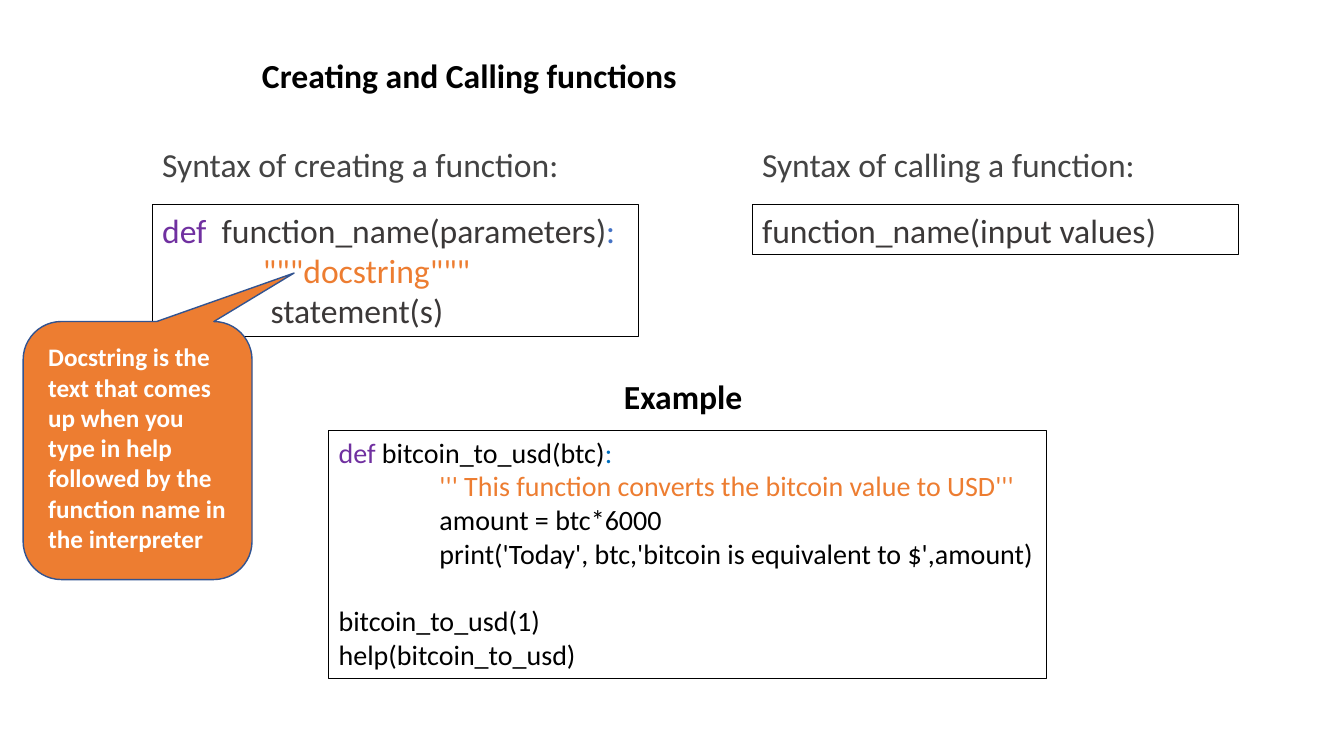
"""Build the slide on creating and calling Python functions."""
import lxml.etree
import pptx
import pptx.dml.color
import pptx.enum.shapes
import pptx.enum.text
import pptx.oxml.ns
import pptx.util

Inches = pptx.util.Inches
Pt = pptx.util.Pt
SHAPE = pptx.enum.shapes.MSO_SHAPE

COLORS = {
    "black": "000000", "white": "FFFFFF", "label": "444444",
    "code": "3B3838", "paren": "404040", "keyword": "7030A0",
    "colon": "4472C4", "colon_example": "0070C0",
    "orange": "ED7D31", "callout_line": "325491",
}

HEADINGS = [
    ("Creating and Calling functions", (2.5, 0.5, 4.32, 0.5), "black", True),
    ("Syntax of creating a function:", (1.51, 1.38, 4.17, 0.5), "label", False),
    ("Syntax of calling a function:", (7.46, 1.38, 3.93, 0.5), "label", False),
    ("Example", (6.09, 3.68, 1.46, 0.5), "black", True),
]

CODE_BOXES = [
    ((1.51, 2.03, 4.82, 1.31), 24, [
        [("def  ", "keyword"), ("function_name(parameters", "code"),
         (")", "paren"), (":", "colon")],
        [("\t", "code"), ('"""docstring"""', "orange")],
        [("\t statement(s)", "code")],
    ], {}),
    ((7.46, 2.03, 4.82, 0.5), 24, [
        [("function_name(input values", "code"), (")", "paren")],
    ], {}),
    ((3.26, 4.27, 7.12, 2.46), 20, [
        [("def ", "keyword"), ("bitcoin_to_usd(btc)", "black"),
         (":", "colon_example")],
        [("\t", "black"),
         ("''' This function converts the bitcoin value to USD'''", "orange")],
        [("\tamount = btc*6000", "black")],
        [("\tprint('Today', btc,'bitcoin is equivalent to $',amount)", "black")],
        [("bitcoin_to_usd(1)", "black")],
        [("help(bitcoin_to_usd)", "black")],
    ], {4: 24}),
]
CODE_TAB = 1

CALLOUT = (0.23, 3.19, 2.27, 2.56)
CALLOUT_TIP = (0.684, -0.688, 0.167)
NOTE_BOX = (0.38, 3.34, 2.04, 2.22)
NOTE = ("Docstring is the text that comes up when you type in help "
        "followed by the function name in the interpreter")


def rgb(name):
    """Return the named colour."""
    return pptx.dml.color.RGBColor.from_string(COLORS[name])


def add_outline(slide, kind, box, line, width, fill=None):
    """Add a preset shape with a line and an optional fill."""
    s = slide.shapes.add_shape(kind, *map(Inches, box))
    s.shadow.inherit = False
    s.line.color.rgb = rgb(line)
    s.line.width = Pt(width)
    if fill:
        s.fill.solid()
        s.fill.fore_color.rgb = rgb(fill)
    else:
        s.fill.background()
    return s


def set_tab(p, position):
    """Give a paragraph one left tab stop."""
    qn = pptx.oxml.ns.qn
    tabs = lxml.etree.SubElement(p._p.get_or_add_pPr(), qn("a:tabLst"))
    lxml.etree.SubElement(tabs, qn("a:tab"),
                          {"pos": str(Inches(position)), "algn": "l"})


def write(s, lines, size, bold=False, wrap=True, gaps=None):
    """Write lines of (text, colour) runs into a shape."""
    tf = s.text_frame
    tf.word_wrap = wrap
    tf.vertical_anchor = pptx.enum.text.MSO_ANCHOR.TOP
    for i, line in enumerate(lines):
        p = tf.paragraphs[0] if i == 0 else tf.add_paragraph()
        if line[0][0].startswith("\t"):
            set_tab(p, CODE_TAB)
        p.alignment = pptx.enum.text.PP_ALIGN.LEFT
        if gaps and i in gaps:
            p.space_before = Pt(gaps[i])
        for text, color in line:
            r = p.add_run()
            r.text = text
            r.font.name = "Calibri"
            r.font.size = Pt(size)
            r.font.bold = bold
            r.font.color.rgb = rgb(color)


def main():
    """Create and save the slide."""
    prs = pptx.Presentation()
    prs.slide_width, prs.slide_height = Inches(13.33), Inches(7.5)
    slide = prs.slides.add_slide(prs.slide_layouts[6])

    for text, box, color, bold in HEADINGS:
        s = slide.shapes.add_textbox(*map(Inches, box))
        write(s, [[(text, color)]], 24, bold=bold, wrap=False)

    for box, size, lines, gaps in CODE_BOXES:
        s = add_outline(slide, SHAPE.RECTANGLE, box, "black", 0.75)
        write(s, lines, size, gaps=gaps)

    s = add_outline(slide, SHAPE.ROUNDED_RECTANGULAR_CALLOUT, CALLOUT,
                    "callout_line", 1, fill="orange")
    for i, value in enumerate(CALLOUT_TIP):
        s.adjustments[i] = value
    s = slide.shapes.add_textbox(*map(Inches, NOTE_BOX))
    write(s, [[(NOTE, "white")]], 18, bold=True)

    prs.save("out.pptx")


if __name__ == "__main__":
    main()
